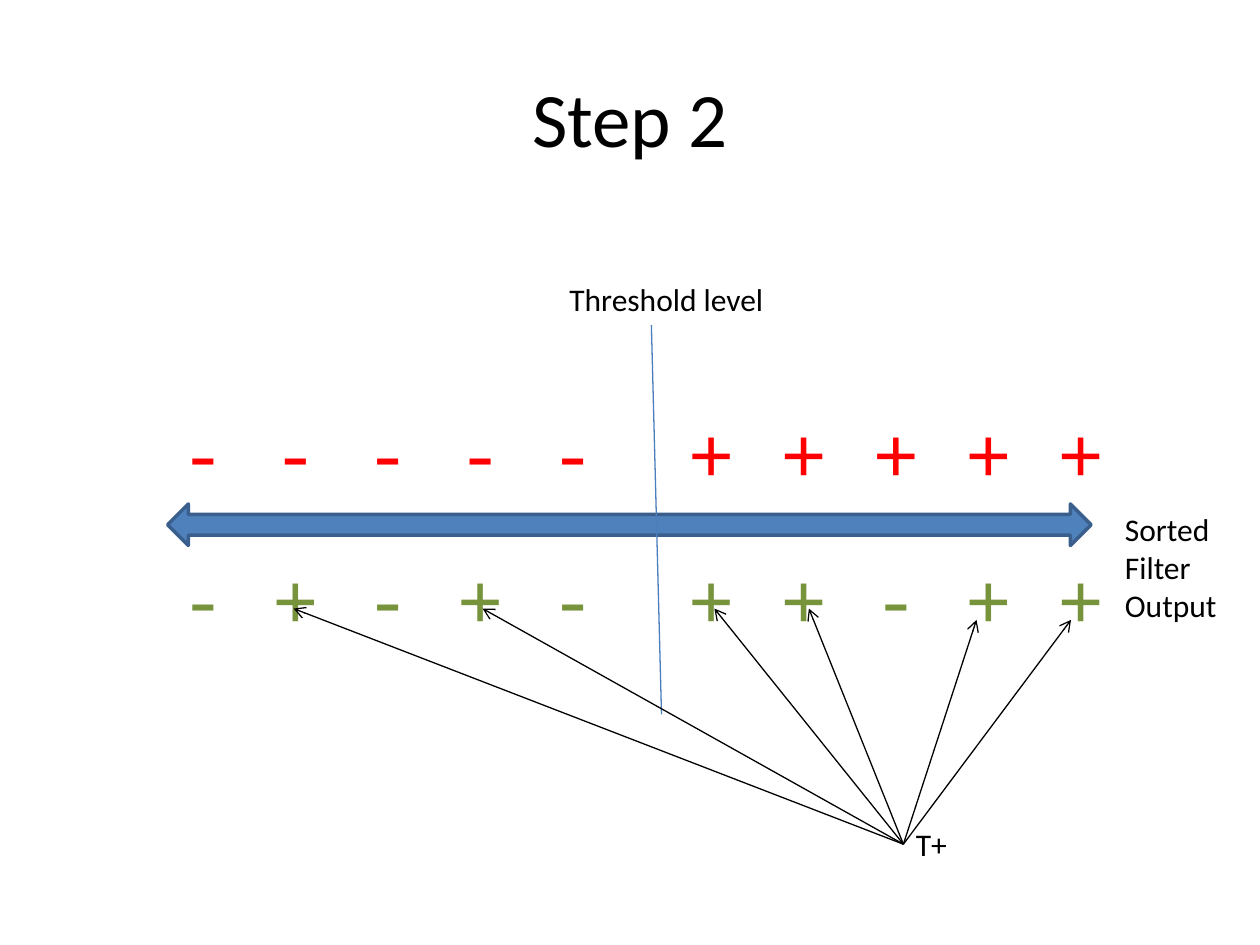
import pptx
import pptx.dml.color
import pptx.enum.shapes
import pptx.enum.text
import pptx.oxml
import pptx.oxml.ns
import pptx.util
from lxml import etree

RGBColor = pptx.dml.color.RGBColor
Inches = pptx.util.Inches
Pt = pptx.util.Pt

BLACK = RGBColor(0x00, 0x00, 0x00)
RED = RGBColor(0xFF, 0x00, 0x00)
GREEN = RGBColor(0x77, 0x93, 0x3C)
BLUE = RGBColor(0x4F, 0x81, 0xBD)
DARK_BLUE = RGBColor(0x3A, 0x5F, 0x8C)
LINE_BLUE = RGBColor(0x4B, 0x7E, 0xBC)

WIDTH, HEIGHT = 10, 7.5
AXIS_LEFT, AXIS_TOP, AXIS_WIDTH, AXIS_HEIGHT = 1.33, 4, 7.33, 0.33
SIGN_SIZE = 44
SIGN_PITCH = 0.6 * SIGN_SIZE / 72  # Courier New advance width, in inches

TITLE = ("Step 2", (0.5, 0.3, 9, 1.25))
LABELS = [
    ("Threshold level", (4.42, 2.17, 2.25, 0.4)),
    ("Sorted Filter Output", (8.83, AXIS_TOP, 1.17, 1.01)),
    ("T+", (7.17, 6.5, 0.92, 0.4)),
]
# Signs below and above the threshold, row top, colour
SIGN_ROWS = [
    ("- - - - -", "+ + + + +", 3.17, RED),
    ("- + - + -", "+ + - + +", 4.33, GREEN),
]
THRESHOLD = ((5.17, 2.58), (5.25, 5.67))
POSITIVES_ORIGIN = (7.17, 6.7)
POSITIVES = [(2.33, 4.83), (3.83, 4.83), (5.67, 4.83),
             (6.42, 4.83), (7.75, 4.92), (8.5, 4.92)]


def add_text(slide, text, box, size=18, font="Calibri", color=BLACK,
             align=pptx.enum.text.PP_ALIGN.LEFT,
             anchor=pptx.enum.text.MSO_ANCHOR.TOP, tab=None):
    """Add a wrapped text box; tab is an optional tab stop in inches."""
    frame = slide.shapes.add_textbox(*map(Inches, box)).text_frame
    frame.word_wrap = True
    frame.vertical_anchor = anchor
    paragraph = frame.paragraphs[0]
    paragraph.alignment = align
    if tab:
        properties = paragraph._p.get_or_add_pPr()
        stops = etree.SubElement(properties, pptx.oxml.ns.qn("a:tabLst"))
        etree.SubElement(stops, pptx.oxml.ns.qn("a:tab"),
                         pos=str(Inches(tab)), algn="l")
    run = paragraph.add_run()
    run.text = text
    for name, value in {"size": Pt(size), "name": font}.items():
        setattr(run.font, name, value)
    run.font.color.rgb = color


def add_line(slide, start, end, color, arrow=False):
    connector = slide.shapes.add_connector(
        pptx.enum.shapes.MSO_CONNECTOR.STRAIGHT,
        *map(Inches, (*start, *end)))
    connector.line.color.rgb = color
    connector.line.width = Pt(0.75)
    if arrow:
        etree.SubElement(connector.line._get_or_add_ln(),
                         pptx.oxml.ns.qn("a:tailEnd"), type="arrow")
    etree.SubElement(connector._element.spPr, pptx.oxml.ns.qn("a:effectLst"))


def add_axis(slide):
    axis = slide.shapes.add_shape(
        pptx.enum.shapes.MSO_SHAPE.LEFT_RIGHT_ARROW,
        *map(Inches, (AXIS_LEFT, AXIS_TOP, AXIS_WIDTH, AXIS_HEIGHT)))
    axis.shadow.inherit = False
    axis.fill.solid()
    axis.fill.fore_color.rgb = BLUE
    axis.line.color.rgb = DARK_BLUE
    axis.line.width = Pt(2)


def main():
    presentation = pptx.Presentation()
    presentation.slide_width = Inches(WIDTH)
    presentation.slide_height = Inches(HEIGHT)
    slide = presentation.slides.add_slide(presentation.slide_layouts[6])

    add_text(slide, *TITLE, size=44, align=pptx.enum.text.PP_ALIGN.CENTER,
             anchor=pptx.enum.text.MSO_ANCHOR.MIDDLE)
    add_axis(slide)
    add_line(slide, *THRESHOLD, LINE_BLUE)
    for below, above, top, color in SIGN_ROWS:
        add_text(slide, f"{below}\t{above}", (AXIS_LEFT, top, 7.58, 0.84),
                 size=SIGN_SIZE, font="Courier New", color=color,
                 tab=(len(below) + 2) * SIGN_PITCH)
    for text, box in LABELS:
        add_text(slide, text, box)
    for target in POSITIVES:
        add_line(slide, POSITIVES_ORIGIN, target, BLACK, arrow=True)

    presentation.save("out.pptx")


if __name__ == "__main__":
    main()
